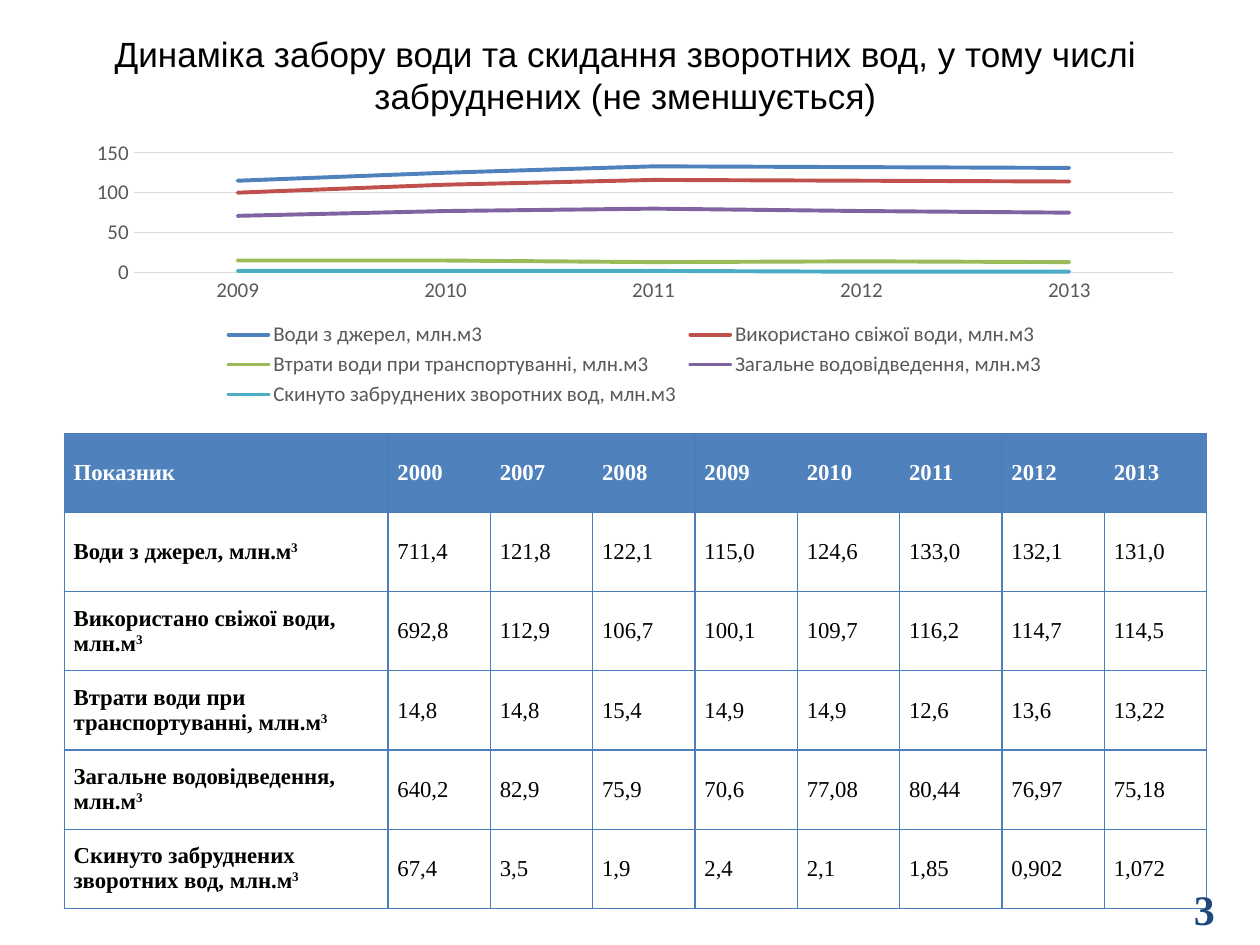
from lxml import etree
from pptx import Presentation
from pptx import util as u
from pptx.chart.data import CategoryChartData
from pptx.dml.color import RGBColor
from pptx.enum import chart as charts, text
from pptx.oxml import ns

BLUE, BORDER, GRID, GREY = "4F81BD", "4B7EBC", "D9D9D9", "595959"


def color(value):
    return RGBColor.from_string(value)


def style(font, name, size, value, bold=False):
    font.name, font.size, font.bold = name, u.Pt(size), bold
    font.color.rgb = color(value)


presentation = Presentation()
presentation.slide_width, presentation.slide_height = u.Inches(10), u.Inches(7.5)
slide = presentation.slides.add_slide(presentation.slide_layouts[5])

years = ["2000", "2007", "2008", "2009", "2010", "2011", "2012", "2013"]
indicators = {
    "Води з джерел, млн.м":
        ["711,4", "121,8", "122,1", "115,0", "124,6", "133,0", "132,1", "131,0"],
    "Використано свіжої води, млн.м":
        ["692,8", "112,9", "106,7", "100,1", "109,7", "116,2", "114,7", "114,5"],
    "Втрати води при транспортуванні, млн.м":
        ["14,8", "14,8", "15,4", "14,9", "14,9", "12,6", "13,6", "13,22"],
    "Загальне водовідведення, млн.м":
        ["640,2", "82,9", "75,9", "70,6", "77,08", "80,44", "76,97", "75,18"],
    "Скинуто забруднених зворотних вод, млн.м":
        ["67,4", "3,5", "1,9", "2,4", "2,1", "1,85", "0,902", "1,072"],
}

# Title
title = slide.shapes.title
title.left, title.top = u.Inches(0.2), u.Inches(0.21)
title.width, title.height = u.Inches(9.53), u.Inches(0.77)
title.text_frame.vertical_anchor = text.MSO_ANCHOR.MIDDLE
title.text_frame.auto_size = text.MSO_AUTO_SIZE.NONE
paragraph = title.text_frame.paragraphs[0]
paragraph.alignment = text.PP_ALIGN.CENTER
run = paragraph.add_run()
run.text = ("Динаміка забору води та скидання зворотних вод, "
            "у тому числі забруднених (не зменшується)")
style(run.font, "Arial", 20, "000000")

# Table: one wide label column, equal year columns, equal rows
table_frame = slide.shapes.add_table(
    len(indicators) + 1, len(years) + 1,
    u.Inches(0.51), u.Inches(3.44), u.Inches(9.07), u.Inches(3.77))
table = table_frame.table
table.horz_banding = False
table.columns[0].width = u.Inches(2.57)
for column in list(table.columns)[1:]:
    column.width = int(u.Inches(9.07 - 2.57) / len(years))

rows = [["Показник"] + years] + [[name] + values for name, values in indicators.items()]
for row_index, row in enumerate(rows):
    for column_index, content in enumerate(row):
        header, label = row_index == 0, column_index == 0
        cell = table.cell(row_index, column_index)
        cell.margin_left = cell.margin_right = u.Pt(5.4)
        cell.margin_top = cell.margin_bottom = 0
        cell.vertical_anchor = text.MSO_ANCHOR.MIDDLE
        paragraph = cell.text_frame.paragraphs[0]
        for part in [content, "3"] if label and not header else [content]:
            run = paragraph.add_run()
            run.text = part
            style(run.font, "Times New Roman", 13,
                  "FFFFFF" if header else "000000", header or label)
            if part == "3":
                run._r.get_or_add_rPr().set("baseline", "30000")
        properties = cell._tc.get_or_add_tcPr()
        for side in ("a:lnL", "a:lnR", "a:lnT", "a:lnB"):
            line = etree.SubElement(properties, ns.qn(side), w=str(u.Pt(0.75)))
            fill = etree.SubElement(line, ns.qn("a:solidFill"))
            etree.SubElement(fill, ns.qn("a:srgbClr"), val=BORDER)
        cell.fill.solid()
        cell.fill.fore_color.rgb = color(BLUE if header else "FFFFFF")

# Line chart of the last five years, in whole numbers
data = CategoryChartData()
data.categories = years[-5:]
for name, values in indicators.items():
    data.add_series(name + "3", [round(float(value.replace(",", "."))) for value in values[-5:]])
chart = slide.shapes.add_chart(
    charts.XL_CHART_TYPE.LINE, u.Inches(0.59), u.Inches(1.07),
    u.Inches(8.9), u.Inches(2.2), data).chart
style(chart.font, "Calibri", 10, "000000")
chart.has_title = False
chart.has_legend = True
chart.legend.position = charts.XL_LEGEND_POSITION.BOTTOM
chart.legend.include_in_layout = False
style(chart.legend.font, "Calibri", 12, GREY)
chart.plots[0].vary_by_categories = False

series_colors = [BLUE, "C0504D", "9BBB59", "8064A2", "4BACC6"]
for series, value in zip(chart.plots[0].series, series_colors):
    series.smooth = False
    series.marker.style = charts.XL_MARKER_STYLE.NONE
    series.format.line.width = u.Pt(2.25)
    series.format.line.color.rgb = color(value)
    series._element.find(".//" + ns.qn("a:ln")).set("cap", "rnd")

# Axes
for axis in (chart.category_axis, chart.value_axis):
    axis.major_tick_mark = axis.minor_tick_mark = charts.XL_TICK_MARK.NONE
    style(axis.tick_labels.font, "Calibri", 12, GREY)
value_axis = chart.value_axis
value_axis.minimum_scale, value_axis.maximum_scale, value_axis.major_unit = 0, 150, 50
value_axis.tick_labels.number_format = "0"
value_axis.tick_labels.number_format_is_linked = False
value_axis.format.line.fill.background()
for line in (chart.category_axis.format.line, value_axis.major_gridlines.format.line):
    line.width = u.Pt(0.75)
    line.color.rgb = color(GRID)

# Page number
number_box = slide.shapes.add_textbox(
    u.Inches(7.41), u.Inches(7.01), u.Inches(2.33), u.Inches(0.4))
number_box.text_frame.word_wrap = True
number_box.text_frame.vertical_anchor = text.MSO_ANCHOR.MIDDLE
paragraph = number_box.text_frame.paragraphs[0]
paragraph.alignment = text.PP_ALIGN.RIGHT
run = paragraph.add_run()
run.text = "3"
style(run.font, "Times New Roman", 24, "1F497D", True)

presentation.save("out.pptx")
